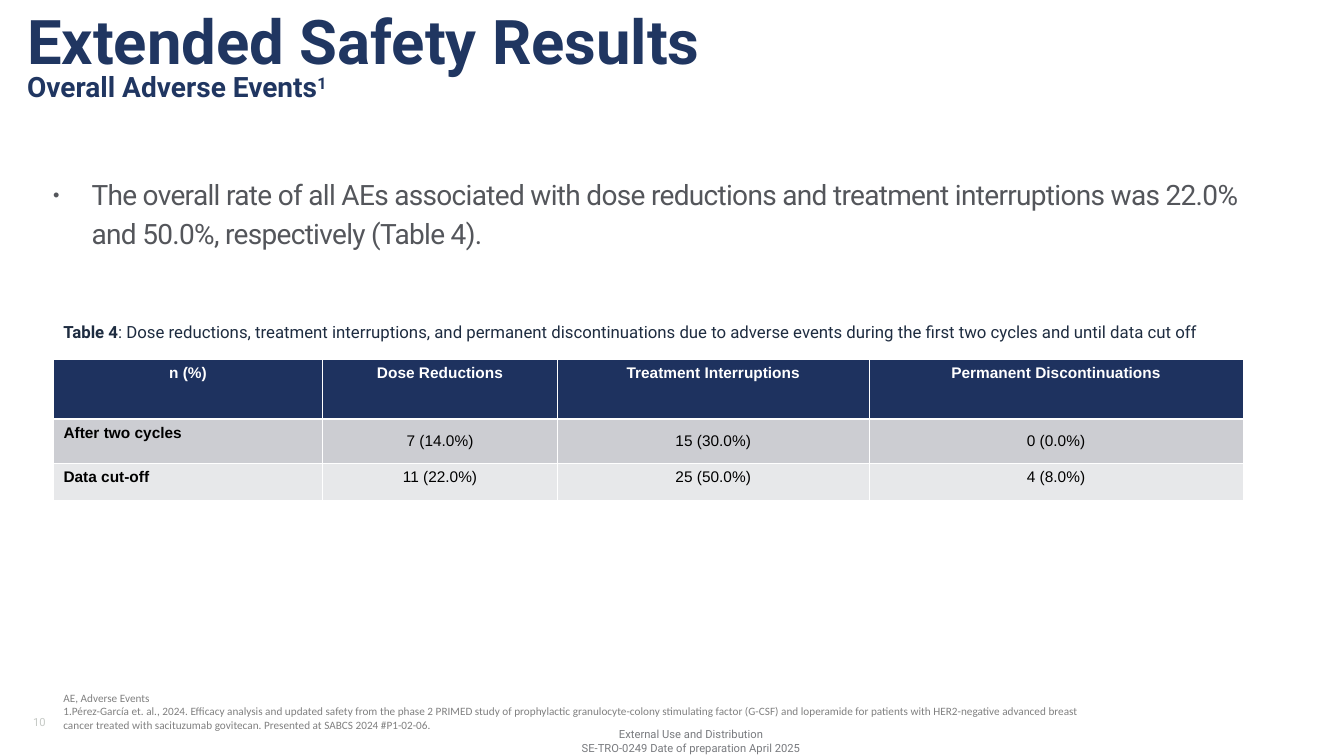
from lxml import etree
from pptx import Presentation
from pptx.dml.color import RGBColor
from pptx.enum.text import MSO_ANCHOR, PP_ALIGN
from pptx.oxml.ns import qn
from pptx.util import Emu, Pt

PX = 9144  # 100 px to the inch
CENTER, LEFT = PP_ALIGN.CENTER, PP_ALIGN.LEFT
TOP, MIDDLE, BOTTOM = MSO_ANCHOR.TOP, MSO_ANCHOR.MIDDLE, MSO_ANCHOR.BOTTOM

WHITE = RGBColor(0xFF, 0xFF, 0xFF)
BLACK = RGBColor(0, 0, 0)
NAVY = RGBColor(0x1E, 0x32, 0x5F)
TITLE_BLUE = RGBColor(0x20, 0x36, 0x61)
CAPTION_INK = RGBColor(0x1E, 0x2C, 0x40)
BODY_GREY = RGBColor(0x54, 0x56, 0x5B)
FOOTER_GREY = RGBColor(0x78, 0x7A, 0x7E)
NOTE_GREY = RGBColor(0x80, 0x80, 0x80)
PAGE_GREY = RGBColor(0xC6, 0xCA, 0xC6)
ROW_DARK = RGBColor(0xCC, 0xCD, 0xD2)
ROW_LIGHT = RGBColor(0xE7, 0xE8, 0xEA)

TITLE = {"name": "Roboto", "size": Pt(44), "bold": True, "color": TITLE_BLUE}
SUBTITLE = {**TITLE, "size": Pt(20)}
BODY = {"name": "Roboto", "size": Pt(20), "color": BODY_GREY}
CAPTION = {"name": "Roboto", "size": Pt(12), "color": CAPTION_INK}
NOTE = {"name": "Calibri", "size": Pt(8), "color": NOTE_GREY}
FOOTER = {"name": "Roboto", "size": Pt(8), "color": FOOTER_GREY}
PAGE = {**FOOTER, "color": PAGE_GREY}
CELL = {"name": "Arial", "size": Pt(11), "bold": False, "color": BLACK}
CELL_LABEL = {**CELL, "bold": True}
CELL_HEADER = {**CELL_LABEL, "color": WHITE}

THIN, THICK = Pt(0.62), Pt(1.85)
COLUMN_WIDTHS = [267, 233, 309, 371]
# height, fill, label format, value format, value anchor, top border, bottom border
ROW_STYLES = [
    (59, NAVY, CELL_HEADER, CELL_HEADER, TOP, THIN, THICK),
    (44, ROW_DARK, CELL_LABEL, CELL, MIDDLE, THICK, THIN),
    (36, ROW_LIGHT, CELL_LABEL, CELL, TOP, THIN, THIN),
]
TABLE_ROWS = [
    ["n (%)", "Dose Reductions", "Treatment Interruptions", "Permanent Discontinuations"],
    ["After two cycles", "7 (14.0%)", "15 (30.0%)", "0 (0.0%)"],
    ["Data cut-off", "11 (22.0%)", "25 (50.0%)", "4 (8.0%)"],
]


def px(value):
    return Emu(value * PX)


def add_run(paragraph, text, text_format):
    run = paragraph.add_run()
    run.text = text
    for attribute, value in text_format.items():
        if attribute == "color":
            run.font.color.rgb = value
        else:
            setattr(run.font, attribute, value)
    return run


def add_text(slide, box, paragraphs, anchor=TOP, **paragraph_format):
    """Add a text box; each paragraph is a list of (text, format) runs."""
    frame = slide.shapes.add_textbox(*map(px, box)).text_frame
    frame.word_wrap = True
    frame.vertical_anchor = anchor
    for index, runs in enumerate(paragraphs):
        paragraph = frame.add_paragraph() if index else frame.paragraphs[0]
        for attribute, value in paragraph_format.items():
            setattr(paragraph, attribute, value)
        for text, text_format in runs:
            add_run(paragraph, text, text_format)
    return frame


def add_bullet(paragraph, color, indent):
    properties = paragraph._p.get_or_add_pPr()
    properties.set("marL", str(px(indent)))
    properties.set("indent", str(-px(indent)))
    bullet_color = etree.SubElement(properties, qn("a:buClr"))
    etree.SubElement(bullet_color, qn("a:srgbClr"), val=str(color))
    etree.SubElement(properties, qn("a:buSzPct"), val="65000")
    etree.SubElement(properties, qn("a:buFont"), typeface="Arial")
    etree.SubElement(properties, qn("a:buChar"), char="•")


def set_borders(cell, top, bottom):
    properties = cell._tc.get_or_add_tcPr()
    for side, width in {"L": THIN, "R": THIN, "T": top, "B": bottom}.items():
        line = etree.SubElement(properties, qn(f"a:ln{side}"), w=str(int(width)))
        fill = etree.SubElement(line, qn("a:solidFill"))
        etree.SubElement(fill, qn("a:srgbClr"), val=str(WHITE))


def add_events_table(slide, left, top):
    height = sum(style[0] for style in ROW_STYLES)
    box = map(px, (left, top, sum(COLUMN_WIDTHS), height))
    table = slide.shapes.add_table(len(TABLE_ROWS), len(COLUMN_WIDTHS), *box).table
    for column, width in zip(table.columns, COLUMN_WIDTHS):
        column.width = px(width)
    for row_index, (row, texts, style) in enumerate(zip(table.rows, TABLE_ROWS, ROW_STYLES)):
        row_height, fill, label_format, value_format, anchor, top_line, bottom_line = style
        row.height = px(row_height)
        for column_index, (cell, text) in enumerate(zip(row.cells, texts)):
            is_label = column_index == 0
            set_borders(cell, top_line, bottom_line)
            cell.fill.solid()
            cell.fill.fore_color.rgb = fill
            cell.vertical_anchor = TOP if is_label else anchor
            paragraph = cell.text_frame.paragraphs[0]
            paragraph.alignment = LEFT if is_label and row_index else CENTER
            add_run(paragraph, text, label_format if is_label else value_format)


def main():
    presentation = Presentation()
    presentation.slide_width, presentation.slide_height = px(1333), px(750)
    slide = presentation.slides.add_slide(presentation.slide_layouts[6])

    add_text(slide, (514, 719, 343, 32), [
        [("External Use and Distribution", FOOTER)],
        [("SE-TRO-0249 Date of preparation April 2025", FOOTER)],
    ], MIDDLE, alignment=CENTER)
    add_text(slide, (23, 700, 300, 32), [[("10", PAGE)]], MIDDLE)

    body = add_text(slide, (43, 167, 1200, 94), [[(
        "The overall rate of all AEs associated with dose reductions and treatment "
        "interruptions was 22.0% and 50.0%, respectively (Table 4).", BODY)]])
    statement = body.paragraphs[0]
    add_bullet(statement, BODY_GREY, 38)
    statement.line_spacing = 1.14
    statement.space_after = Pt(6)
    statement.runs[0]._r.get_or_add_rPr().set("spc", "-50")

    add_text(slide, (53, 314, 1180, 30), [[
        ("Table 4", {**CAPTION, "bold": True}),
        (": Dose reductions, treatment interruptions, and permanent discontinuations due to "
         "adverse events during the first two cycles and until data cut off", CAPTION),
    ]])
    add_text(slide, (53, 681, 1058, 50), [
        [("AE, Adverse Events", NOTE)],
        [("1.Pérez-García et. al., 2024. Efficacy analysis and updated safety from the phase 2 "
          "PRIMED study of prophylactic granulocyte-colony stimulating factor (G-CSF) and "
          "loperamide for patients with HER2-negative advanced breast cancer treated with "
          "sacituzumab govitecan. Presented at SABCS 2024 #P1-02-06.", NOTE)],
    ])

    title = add_text(slide, (17, 25, 1200, 82), [
        [("Extended Safety Results", TITLE)],
        [("Overall Adverse Events", SUBTITLE), ("1", SUBTITLE)],
    ], BOTTOM, line_spacing=0.8)
    title.paragraphs[1].runs[1]._r.get_or_add_rPr().set("baseline", "30000")

    add_events_table(slide, 53, 357)
    presentation.save("out.pptx")


if __name__ == "__main__":
    main()
